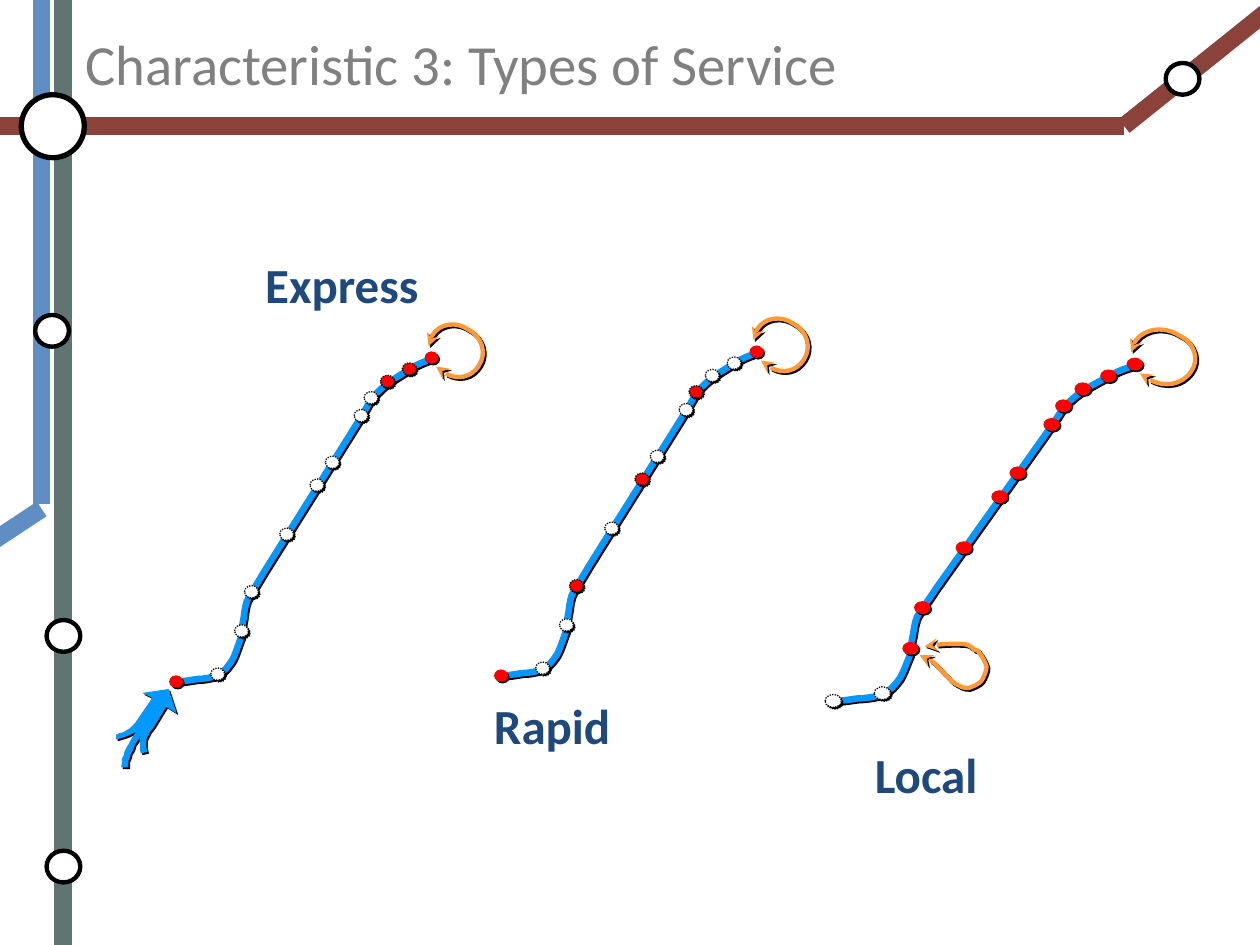
from lxml import etree
from pptx import Presentation
from pptx.dml.color import RGBColor
from pptx.enum.dml import MSO_LINE
from pptx.enum.shapes import MSO_CONNECTOR, MSO_SHAPE
from pptx.enum.text import MSO_ANCHOR, MSO_AUTO_SIZE, PP_ALIGN
from pptx.oxml.ns import qn
from pptx.util import Cm, Pt

OVAL = MSO_SHAPE.OVAL
STRAIGHT = MSO_CONNECTOR.STRAIGHT
DOTTED = MSO_LINE.ROUND_DOT
MIDDLE = MSO_ANCHOR.MIDDLE
NO_AUTOFIT = MSO_AUTO_SIZE.NONE
LEFT, CENTER = PP_ALIGN.LEFT, PP_ALIGN.CENTER

THEME = {
    "font": "Calibri", "title_size": 32.4, "label_size": 28,
    "title": "808080", "label": "1F497D",
    "green": "607472", "blue": "608DC4", "maroon": "8A423A",
    "route": "0099FF", "loop": "FF9933", "served": "FF0000",
    "white": "FFFFFF", "black": "000000",
}


def color(name):
    return RGBColor.from_string(THEME[name])


def dress(shape, fill=None, line=None, width=0.75, shadow=True):
    """Set fill and outline, then a hard drop shadow or none."""
    if fill:
        shape.fill.solid()
        shape.fill.fore_color.rgb = color(fill)
    else:
        shape.fill.background()
    if line:
        shape.line.color.rgb = color(line)
        shape.line.width = Pt(width)
    else:
        shape.line.fill.background()
    shape.shadow.inherit = False
    if shadow:
        effects = shape.element.spPr.find(qn("a:effectLst"))
        drop = etree.SubElement(effects, qn("a:outerShdw"), blurRad="0",
                                dist="17780", dir="2700000", algn="ctr", rotWithShape="0")
        etree.SubElement(drop, qn("a:srgbClr"), val=THEME["black"])


deck = Presentation()
deck.slide_width, deck.slide_height = Cm(25.4), Cm(19.05)
page = deck.slides.add_slide(deck.slide_layouts[5])
shapes = page.shapes

# Metro map frame: coloured tracks and stations
tracks = [
    ("green", 1.27, 19.05, 1.27, 0),
    ("blue", 0.84, 10.16, 0.84, 0),
    ("blue", 0.84, 10.26, -0.43, 11.1),
    ("maroon", 0, 2.54, 22.66, 2.54),
    ("maroon", 25.83, 0, 22.66, 2.54),
]
for name, *ends in tracks:
    track = shapes.add_connector(STRAIGHT, *map(Cm, ends))
    track.line.color.rgb = color(name)
    track.line.width = Pt(10)
    etree.SubElement(track.element.spPr, qn("a:effectLst"))

stations = [
    (0.43, 1.91, 1.27, 1.27, 3),
    (0.94, 12.5, 0.68, 0.64, 2.5),
    (0.94, 17.15, 0.68, 0.64, 2.5),
    (0.71, 6.35, 0.68, 0.64, 2.5),
    (23.5, 1.27, 0.68, 0.64, 2.5),
]
for *frame, width in stations:
    station = shapes.add_shape(OVAL, *map(Cm, frame))
    dress(station, "white", "black", width, shadow=False)

# Route and end loop as Bezier points, measured from the route's top left
ROUTE = [
    (0, 6.53), (0.13, 6.53), (0.28, 6.5), (0.41, 6.48), (0.53, 6.48), (0.71, 6.45),
    (0.84, 6.4), (0.97, 6.32), (1.04, 6.22), (1.12, 6.1), (1.19, 5.97), (1.24, 5.79),
    (1.3, 5.64), (1.32, 5.51), (1.32, 5.38), (1.35, 5.26), (1.37, 5.13), (1.37, 5.05),
    (1.42, 4.9), (1.5, 4.75), (1.4, 4.93), (1.75, 4.34), (2.13, 3.73), (3.23, 1.98),
    (3.61, 1.37), (3.99, 0.76), (3.86, 0.89), (4.04, 0.71), (4.22, 0.51), (4.5, 0.36),
    (4.7, 0.23), (4.9, 0.1), (5.08, 0.05), (5.23, 0),
]
END_LOOP = [
    (5.23, 0.18), (5.26, 0.23), (5.31, 0.25), (5.36, 0.28), (5.61, 0.46), (5.94, 0.41),
    (6.1, 0.15), (6.25, -0.08), (6.17, -0.41), (5.89, -0.56), (5.64, -0.74),
    (5.31, -0.69), (5.16, -0.46), (5.11, -0.38), (5.08, -0.3), (5.08, -0.23),
]
STOPS = [
    (-0.01, 6.53), (0.83, 6.38), (1.31, 5.51), (1.51, 4.72), (2.22, 3.56), (2.83, 2.57),
    (3.14, 2.11), (3.72, 1.17), (3.92, 0.81), (4.25, 0.48), (4.69, 0.23), (5.14, 0),
]
TURNBACK = [
    (18.54, 13.21), (18.64, 13.26), (18.72, 13.28), (18.82, 13.36), (18.92, 13.44),
    (19, 13.56), (19.1, 13.64), (19.18, 13.74), (19.25, 13.79), (19.33, 13.82),
    (19.41, 13.87), (19.46, 13.87), (19.53, 13.87), (19.61, 13.84), (19.74, 13.79),
    (19.79, 13.72), (19.84, 13.64), (19.89, 13.51), (19.89, 13.44), (19.86, 13.34),
    (19.79, 13.21), (19.74, 13.16), (19.71, 13.08), (19.69, 13.13), (19.66, 13.11),
    (19.61, 13.08), (19.58, 13.03), (19.51, 13), (19.43, 12.98), (19.35, 12.98),
    (19.23, 12.98), (19.08, 12.98), (18.77, 13), (18.64, 13.03),
]
FEEDER = [
    (3.4, 13.89), (2.87, 13.97), (3.07, 14.07), (2.72, 14.58), (2.67, 14.63), (2.62, 14.68),
    (2.57, 14.71), (2.49, 14.76), (2.41, 14.78), (2.34, 14.81), (2.34, 14.91), (2.44, 14.88),
    (2.51, 14.86), (2.59, 14.83), (2.69, 14.78), (2.74, 14.76), (2.69, 14.83), (2.64, 14.91),
    (2.59, 15.01), (2.54, 15.09), (2.51, 15.16), (2.49, 15.24), (2.46, 15.29), (2.46, 15.37),
    (2.44, 15.47), (2.59, 15.47), (2.59, 15.34), (2.62, 15.27), (2.64, 15.19), (2.69, 15.11),
    (2.72, 15.01), (2.77, 14.94), (2.82, 14.86), (2.84, 14.78), (2.82, 14.91), (2.82, 15.11),
    (2.84, 15.19), (2.97, 15.16), (2.95, 15.06), (2.95, 14.91), (2.97, 14.86), (3, 14.81),
    (3.02, 14.76), (3.1, 14.66), (3.35, 14.25), (3.56, 14.38),
]

# Stop pattern: R served, r served with dotted outline, o skipped
services = [
    ("Express", 3.56, 7.21, 1, 1, "RoooooooorrR", (3.18, 5.18)),
    ("Local", 16.81, 7.34, 1.18, 1.04, "ooRRRRRRRRRR", (14.96, 15.06)),
    ("Rapid", 10.11, 7.09, 1, 1, "RoororoorooR", (7.42, 14.07)),
]
STOP_STYLES = {"R": ("served", None), "r": ("served", "black"), "o": ("white", "black")}

curves = []
for name, left, top, scale_x, scale_y, pattern, corner in services:
    for points, stroke in ((ROUTE, "route"), (END_LOOP, "loop")):
        curves.append((stroke, [(left + x * scale_x, top + y * scale_y) for x, y in points]))
curves.append(("loop", TURNBACK))

for stroke, points in curves:
    start, *rest = [(Cm(x), Cm(y)) for x, y in points]
    builder = shapes.build_freeform(*start)
    builder.add_line_segments(rest, close=False)
    curve = builder.convert_to_shape()
    segments = list(curve.element.iter(qn("a:lnTo")))
    for first in range(0, len(segments), 3):
        outline = segments[first].getparent()
        bezier = etree.SubElement(outline, qn("a:cubicBezTo"))
        for segment in segments[first:first + 3]:
            bezier.append(segment[0])
            outline.remove(segment)
    dress(curve, line=stroke, width=3.75 if stroke == "route" else 2.5)
    if stroke == "loop":
        for end in ("a:headEnd", "a:tailEnd"):
            etree.SubElement(curve.element.spPr.find(qn("a:ln")), qn(end), type="stealth")

start, *rest = [(Cm(x), Cm(y)) for x, y in FEEDER]
builder = shapes.build_freeform(*start)
builder.add_line_segments(rest, close=True)
dress(builder.convert_to_shape(), "route")

texts = [(shapes.title, "Characteristic 3: Types of Service", (1.47, 0, 17.35, 2.54),
          LEFT, {"size": Pt(THEME["title_size"]), "bold": False}, "title")]
for name, left, top, scale_x, scale_y, pattern, corner in services:
    width, height = 0.28 * scale_x, 0.25 * scale_y
    for (x, y), code in zip(STOPS, pattern):
        frame = (left + x * scale_x - width / 2, top + y * scale_y - height / 2, width, height)
        stop = shapes.add_shape(OVAL, *map(Cm, frame))
        fill, line = STOP_STYLES[code]
        dress(stop, fill, line)
        if line:
            stop.line.dash_style = DOTTED
    label = shapes.add_textbox(0, 0, 0, 0)
    texts.append((label, name, (*corner, 7.42, 1.07), CENTER,
                  {"size": Pt(THEME["label_size"]), "bold": True}, "label"))

for box, words, frame, align, formats, tone in texts:
    box.left, box.top, box.width, box.height = map(Cm, frame)
    box.text_frame.text = words
    for key, value in {"word_wrap": True, "auto_size": NO_AUTOFIT,
                       "vertical_anchor": MIDDLE}.items():
        setattr(box.text_frame, key, value)
    para = box.text_frame.paragraphs[0]
    para.alignment = align
    span = para.runs[0]
    for key, value in {"name": THEME["font"], **formats}.items():
        setattr(span.font, key, value)
    span.font.color.rgb = color(tone)

deck.save("out.pptx")
